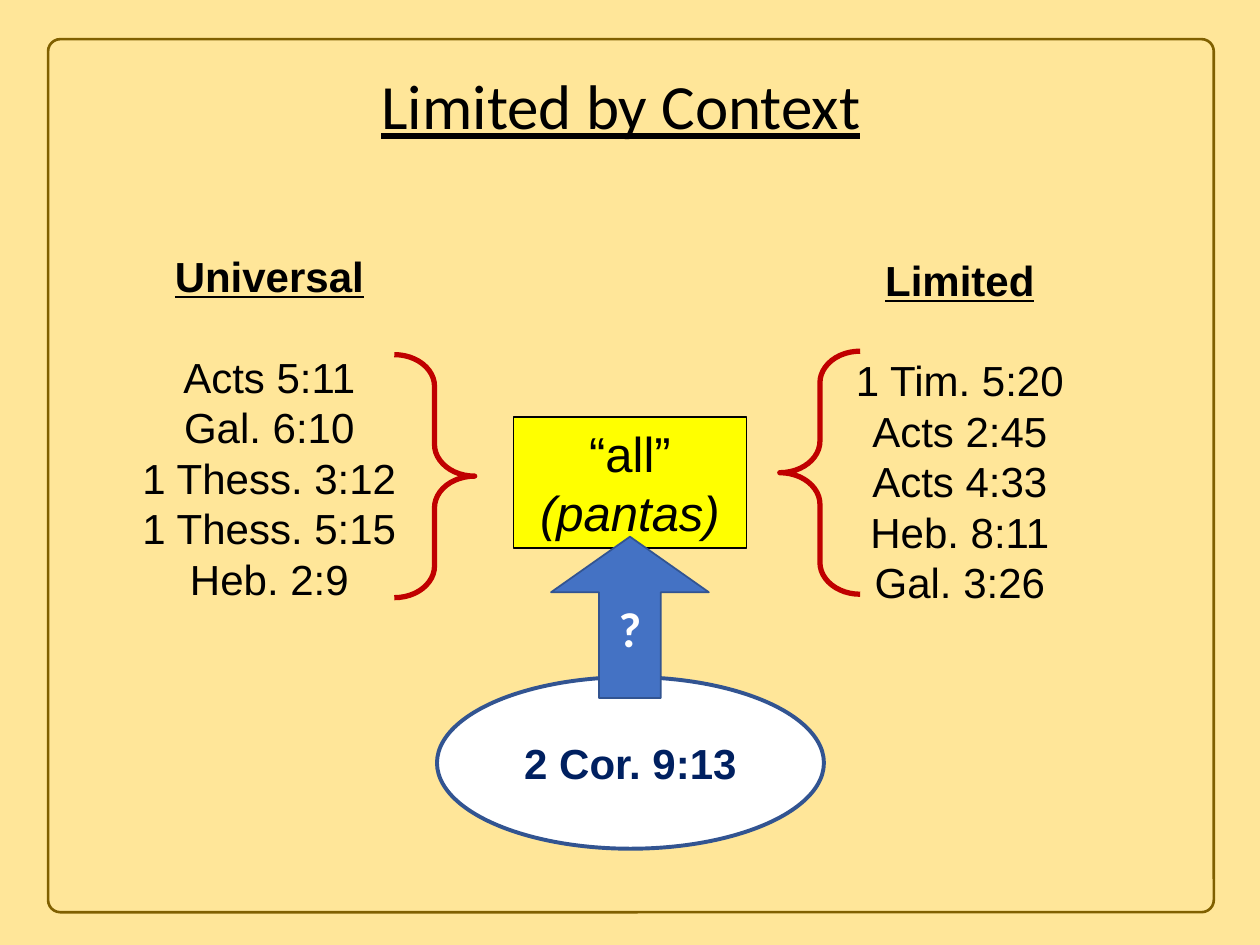
from pptx import Presentation
from pptx import util as u
from pptx.dml.color import RGBColor
from pptx.enum import shapes, text

COLORS = {
    "sand": "FFE699", "olive": "806000", "black": "000000", "white": "FFFFFF",
    "yellow": "FFFF00", "red": "C00000", "blue": "4472C4", "edge": "325491",
    "navy": "002060",
}
SHAPE = shapes.MSO_SHAPE


def color(name):
    return RGBColor.from_string(COLORS[name])


class SlideBuilder:
    """Holds the text style and the current slide."""

    style = {"name": "Arial", "size": 24, "color": "black",
             "bold": False, "italic": False, "underline": False}

    def __init__(self, s):
        self.s = s

    def background(self, name):
        fill = self.s.background.fill
        fill.solid()
        fill.fore_color.rgb = color(name)

    def shape(self, kind, box, line, width, fill=None, adj=()):
        sp = self.s.shapes.add_shape(kind, *map(u.Cm, box))
        sp.shadow.inherit = False
        for i, value in enumerate(adj):
            sp.adjustments[i] = value
        if fill:
            sp.fill.solid()
            sp.fill.fore_color.rgb = color(fill)
        else:
            sp.fill.background()
        sp.line.color.rgb = color(line)
        sp.line.width = u.Pt(width)
        return sp

    def textbox(self, box, lines):
        sp = self.s.shapes.add_textbox(*map(u.Cm, box))
        self.add_text(sp, lines, grow=True)

    def add_text(self, sp, lines, grow=False):
        """Each line is (words, format changes, space after in points)."""
        tf = sp.text_frame
        tf.word_wrap = True
        if grow:
            tf.auto_size = text.MSO_AUTO_SIZE.SHAPE_TO_FIT_TEXT
            tf.vertical_anchor = text.MSO_ANCHOR.TOP
        else:
            tf.vertical_anchor = text.MSO_ANCHOR.MIDDLE
        for i, (words, changes, after) in enumerate(lines):
            p = tf.paragraphs[0] if i == 0 else tf.add_paragraph()
            p.alignment = text.PP_ALIGN.CENTER
            if after:
                p.space_after = u.Pt(after)
            r = p.add_run()
            r.text = words
            fmt = {**self.style, **changes}
            r.font.color.rgb = color(fmt.pop("color"))
            fmt["size"] = u.Pt(fmt["size"])
            for key, value in fmt.items():
                setattr(r.font, key, value)

    def verse_list(self, box, heading, verses):
        head = (heading, {"bold": True, "underline": True}, 28.8)
        self.textbox(box, [head] + [(v, {}, 0) for v in verses])

    def brace(self, kind, left, top):
        self.shape(kind, (left, top, 1.62, 4.9), "red", 3, adj=(0.394, 0.5))


def main():
    prs = Presentation()
    prs.slide_width, prs.slide_height = u.Cm(25.4), u.Cm(19.05)
    b = SlideBuilder(prs.slides.add_slide(prs.slide_layouts[6]))

    # Background and frame
    b.background("sand")
    b.shape(SHAPE.ROUNDED_RECTANGLE, (0.97, 0.79, 23.5, 17.6), "olive", 1.5,
            adj=(0.014,))

    # Key word
    sp = b.shape(SHAPE.RECTANGLE, (10.35, 8.41, 4.7, 2.64), "black", 0.75, "yellow")
    b.add_text(sp, [("“all”", {"size": 28}, 0),
                    ("(pantas)", {"size": 28, "italic": True}, 0)], grow=True)

    # Title
    b.textbox((6.68, 1.22, 11.68, 1.8),
              [("Limited by Context",
                {"name": "Calibri", "size": 36, "underline": True}, 0)])

    # Verse lists and their braces
    b.verse_list((1.8, 4.93, 7.26, 7.44), "Universal",
                 ["Acts 5:11", "Gal. 6:10", "1 Thess. 3:12", "1 Thess. 5:15",
                  "Heb. 2:9"])
    b.verse_list((15.72, 5, 7.26, 7.44), "Limited",
                 ["1 Tim. 5:20", "Acts 2:45", "Acts 4:33", "Heb. 8:11",
                  "Gal. 3:26"])
    b.brace(SHAPE.RIGHT_BRACE, 7.95, 7.15)
    b.brace(SHAPE.LEFT_BRACE, 15.72, 7.08)

    # Passage in question, pointing to the key word
    sp = b.shape(SHAPE.OVAL, (8.81, 13.65, 7.8, 3.46), "edge", 2.25, "white")
    b.add_text(sp, [("2 Cor. 9:13", {"color": "navy", "bold": True}, 0)])
    sp = b.shape(SHAPE.UP_ARROW, (11.11, 10.82, 3.18, 3.25), "edge", 1, "blue",
                 adj=(0.392, 0.352))
    b.add_text(sp, [("?", {"name": "Calibri", "size": 28, "color": "white",
                           "bold": True}, 0)])

    prs.save("out.pptx")


if __name__ == "__main__":
    main()
